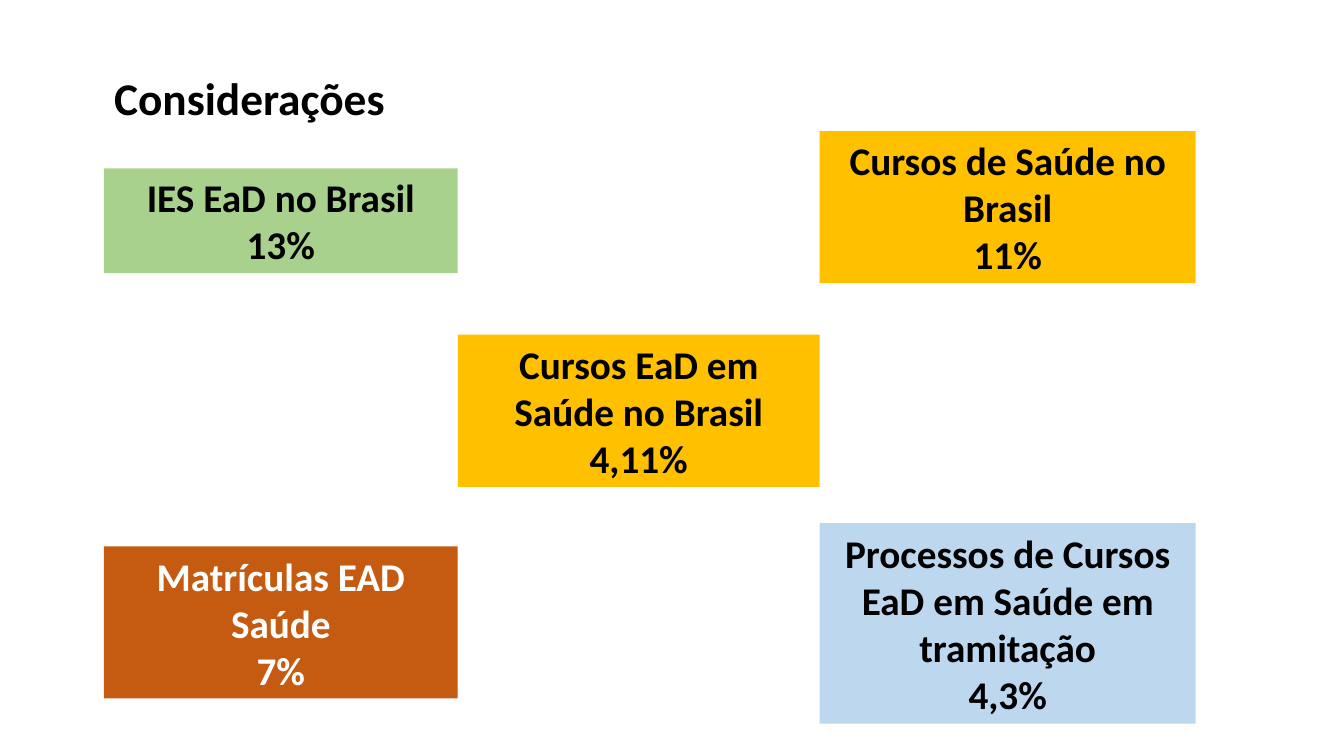
from pptx import Presentation
from pptx.dml.color import RGBColor
from pptx.enum.shapes import MSO_SHAPE
from pptx.enum.text import MSO_ANCHOR, PP_ALIGN
from pptx.util import Inches, Pt

RECT = MSO_SHAPE.RECTANGLE
MIDDLE, BOTTOM = MSO_ANCHOR.MIDDLE, MSO_ANCHOR.BOTTOM
CENTER = PP_ALIGN.CENTER

THEME = {
    "font": "Calibri",
    "title_size": 32.4,
    "card_size": 28,
    "black": "000000",
    "white": "FFFFFF",
    "green": "A9D18E",
    "gold": "FFC000",
    "blue": "BDD7EE",
    "rust": "C55A11",
}

TITLE = "Considerações"
TITLE_BOX = (0.33, 0.63, 4.29, 0.66)

# Columns touch side to side: left edge and width of each
COLUMNS = {"left": (1.03, 3.51), "mid": (4.54, 3.59), "right": (8.13, 3.73)}

# label, value, column, top, height, fill, text colour
CARDS = [
    ("IES EaD no Brasil", "13%", "left", 1.67, 1.04, "green", "black"),
    ("Cursos de Saúde no Brasil", "11%", "right", 1.3, 1.51, "gold", "black"),
    ("Cursos EaD em Saúde no Brasil", "4,11%", "mid", 3.32, 1.51, "gold", "black"),
    ("Processos de Cursos EaD em Saúde em tramitação", "4,3%",
     "right", 5.19, 1.99, "blue", "black"),
    ("Matrículas EAD Saúde", "7%", "left", 5.42, 1.51, "rust", "white"),
]


def color(name):
    return RGBColor.from_string(THEME[name])


def write(frame, lines, size, ink, anchor):
    """Fill a text frame with bold centred paragraphs."""
    frame.word_wrap = True
    frame.vertical_anchor = anchor
    frame.text = "\n".join(lines)
    for para in frame.paragraphs:
        para.alignment = CENTER
        para.font.name = THEME["font"]
        para.font.size = Pt(THEME[size])
        para.font.bold = True
        para.font.color.rgb = color(ink)


def add_card(slide, label, value, column, top, height, fill, ink):
    left, width = COLUMNS[column]
    card = slide.shapes.add_shape(RECT, *map(Inches, (left, top, width, height)))
    card.shadow.inherit = False
    card.fill.solid()
    card.fill.fore_color.rgb = color(fill)
    card.line.fill.background()
    write(card.text_frame, [label, value], "card_size", ink, MIDDLE)


def main():
    deck = Presentation()
    deck.slide_width, deck.slide_height = Inches(13.33), Inches(7.5)
    slide = deck.slides.add_slide(deck.slide_layouts[6])
    title = slide.shapes.add_textbox(*map(Inches, TITLE_BOX))
    write(title.text_frame, [TITLE], "title_size", "black", BOTTOM)
    title.text_frame.paragraphs[0].line_spacing = 0.9
    for card in CARDS:
        add_card(slide, *card)
    deck.save("out.pptx")


if __name__ == "__main__":
    main()
